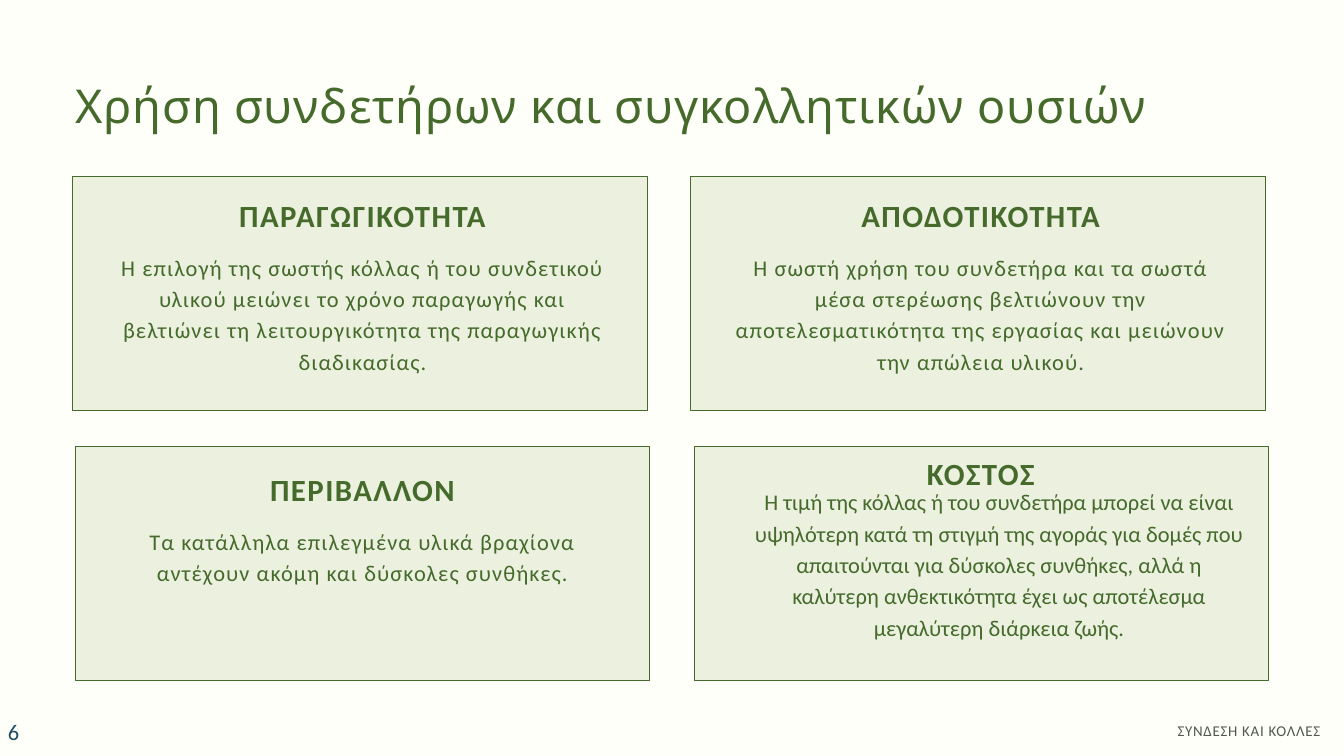
from dataclasses import dataclass

from pptx import Presentation
from pptx import util as u
from pptx.dml.color import RGBColor
from pptx.enum import shapes, text

PX = u.Inches(1) // 100  # 100 px to the inch


@dataclass(frozen=True)
class Style:
    size: int
    color: str
    leading: float = None  # line spacing in points
    tracking: float = 0  # letter spacing in points
    bold: bool = False
    font: str = "Calibri"
    align: text.PP_ALIGN = text.PP_ALIGN.CENTER


class Theme:
    background, panel, green = "FEFFF8", "EBF1DE", "456A2C"
    border = 0.75
    title = Style(50, green, 66.8, 1, font="League Spartan", align=text.PP_ALIGN.LEFT)
    heading = Style(33, green, 41.2, 1.6, bold=True)
    body = Style(24, green, 33.6, 1.2)
    tight_body = Style(24, green, 33.6)
    footer = Style(16, "52584D", 22.4, 0.8, align=text.PP_ALIGN.RIGHT)
    number = Style(24, "1E4D65", tracking=1.2, align=text.PP_ALIGN.LEFT)


PANEL_W, PANEL_H = 855, 348
TEXT_W, HEADING_H = 739, 57

# panel corner, heading corner, body corner, body height, body style, wording
CARDS = [
    ((112, 664), (170, 698), (170, 779), 141, Theme.body, "ΠΕΡΙΒΑΛΛΟΝ",
     "Τα κατάλληλα επιλεγμένα υλικά βραχίονα αντέχουν ακόμη και δύσκολες συνθήκες."),
    ((108, 262), (170, 291), (170, 371), 237, Theme.body, "ΠΑΡΑΓΩΓΙΚΟΤΗΤΑ",
     "Η επιλογή της σωστής κόλλας ή του συνδετικού υλικού μειώνει το χρόνο "
     "παραγωγής και βελτιώνει τη λειτουργικότητα της παραγωγικής διαδικασίας."),
    ((1028, 262), (1090, 291), (1090, 371), 189, Theme.body, "ΑΠΟΔΟΤΙΚΟΤΗΤΑ",
     "Η σωστή χρήση του συνδετήρα και τα σωστά μέσα στερέωσης βελτιώνουν την "
     "αποτελεσματικότητα της εργασίας και μειώνουν την απώλεια υλικού."),
    ((1033, 664), (1090, 674), (1117, 720), 284, Theme.tight_body, "ΚΟΣΤΟΣ",
     "Η τιμή της κόλλας ή του συνδετήρα μπορεί να είναι υψηλότερη κατά τη στιγμή "
     "της αγοράς για δομές που απαιτούνται για δύσκολες συνθήκες, αλλά η καλύτερη "
     "ανθεκτικότητα έχει ως αποτέλεσμα μεγαλύτερη διάρκεια ζωής."),
]


def emu(*lengths):
    return [u.Emu(length * PX) for length in lengths]


def write(box, wording, style, insets=(0, 0), anchor=text.MSO_ANCHOR.TOP):
    """Put one styled paragraph into a text-bearing shape."""
    frame = box.text_frame
    side, end = emu(*insets)
    frame_format = {
        "word_wrap": True, "auto_size": text.MSO_AUTO_SIZE.NONE,
        "vertical_anchor": anchor, "margin_left": side, "margin_right": side,
        "margin_top": end, "margin_bottom": end,
    }
    for name, value in frame_format.items():
        setattr(frame, name, value)
    paragraph = frame.paragraphs[0]
    paragraph.alignment = style.align
    if style.leading:
        paragraph.line_spacing = u.Pt(style.leading)
    run = paragraph.add_run()
    run.text = wording
    font_format = {"size": u.Pt(style.size), "name": style.font, "bold": style.bold}
    for name, value in font_format.items():
        setattr(run.font, name, value)
    run.font.color.rgb = RGBColor.from_string(style.color)
    if style.tracking:
        run._r.get_or_add_rPr().set("spc", str(round(style.tracking * 100)))


def add_title(slide, wording):
    title = slide.shapes.title
    title.left, title.top, title.width, title.height = emu(112, 105, 1771, 94)
    write(title, wording, Theme.title)


def add_panel(slide, corner):
    panel = slide.shapes.add_shape(
        shapes.MSO_SHAPE.RECTANGLE, *emu(*corner, PANEL_W, PANEL_H))
    panel.shadow.inherit = False
    panel.fill.solid()
    panel.fill.fore_color.rgb = RGBColor.from_string(Theme.panel)
    panel.line.color.rgb = RGBColor.from_string(Theme.green)
    panel.line.width = u.Pt(Theme.border)


def add_card(slide, panel_at, heading_at, body_at, body_h, body_style, heading, body):
    add_panel(slide, panel_at)
    group = slide.shapes.add_group_shape()
    heading_box = group.shapes.add_textbox(*emu(*heading_at, TEXT_W, HEADING_H))
    write(heading_box, heading, Theme.heading)
    body_box = group.shapes.add_textbox(*emu(*body_at, TEXT_W, body_h))
    write(body_box, body, body_style)


def main():
    deck = Presentation()
    deck.slide_width, deck.slide_height = emu(2000, 1125)
    slide = deck.slides.add_slide(deck.slide_layouts[5])
    slide.background.fill.solid()
    slide.background.fill.fore_color.rgb = RGBColor.from_string(Theme.background)

    # Footer and title
    footer = slide.shapes.add_textbox(*emu(1133, 1070, 832, 30))
    write(footer, "ΣΥΝΔΕΣΗ ΚΑΙ ΚΟΛΛΕΣ", Theme.footer)
    add_title(slide, "Χρήση συνδετήρων και συγκολλητικών ουσιών")

    # Four benefit cards
    for card in CARDS:
        add_card(slide, *card)

    # Page number
    number = slide.shapes.add_textbox(*emu(2, 1069, 233, 40))
    write(number, "6", Theme.number, insets=(10, 5), anchor=text.MSO_ANCHOR.MIDDLE)

    deck.save("out.pptx")


if __name__ == "__main__":
    main()
